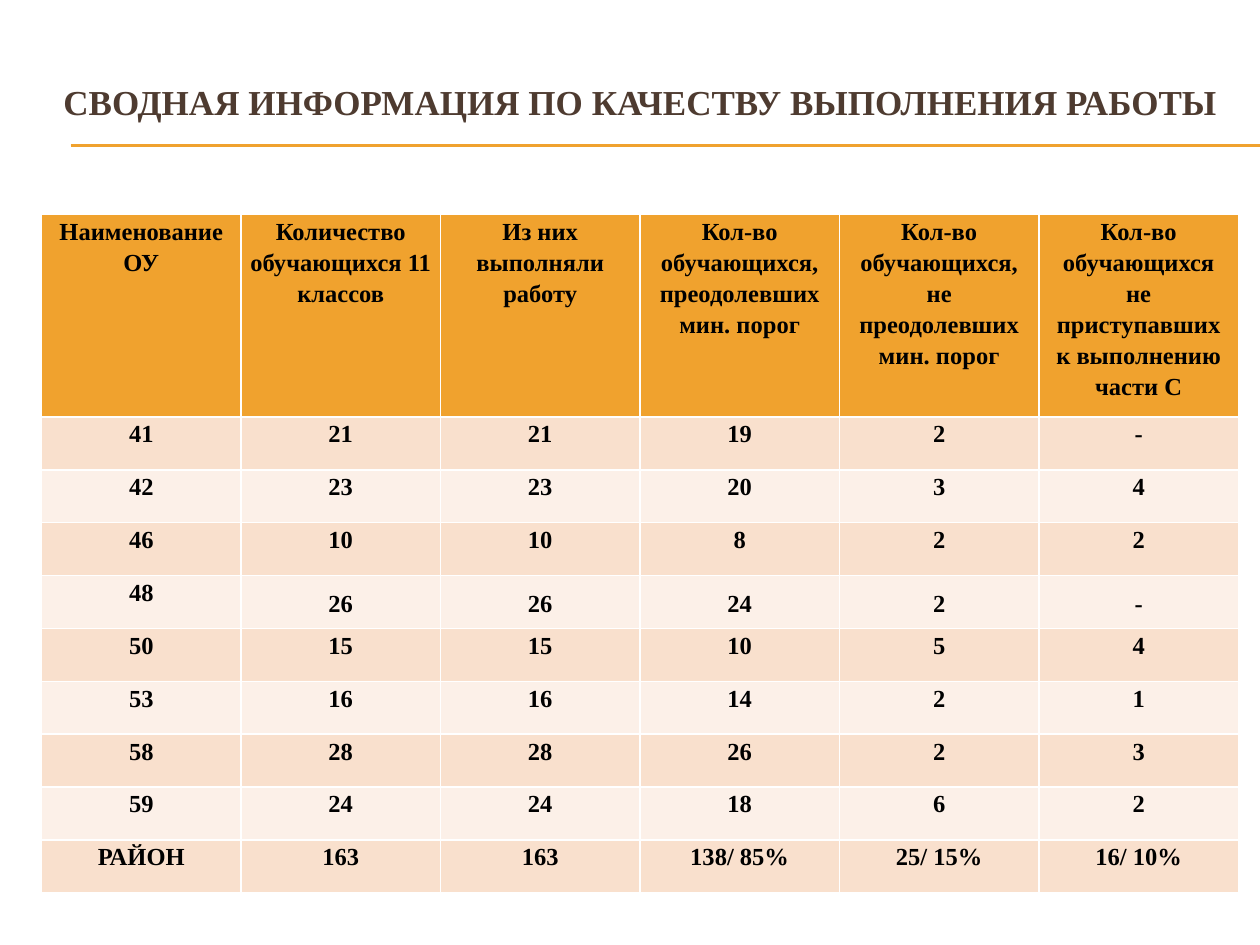
from dataclasses import dataclass

from lxml.etree import SubElement
from pptx import Presentation
from pptx.dml.color import RGBColor as Rgb
from pptx.enum.shapes import MSO_CONNECTOR as Link
from pptx.enum.text import MSO_ANCHOR as Anchor, PP_ALIGN as Align
from pptx.oxml.ns import qn
from pptx.util import Inches, Pt


@dataclass(frozen=True)
class Theme:
    face: str = "Times New Roman"
    title: str = "4E3B30"
    ink: str = "000000"
    gold: str = "F0A22E"
    bands: tuple = ("FCF0E8", "F9E0CD")
    big: int = 20
    body: int = 14


THEME = Theme()
TITLE = "СВОДНАЯ ИНФОРМАЦИЯ ПО КАЧЕСТВУ ВЫПОЛНЕНИЯ РАБОТЫ"
ROWS = [
    ("Наименование ОУ", "Количество обучающихся 11 классов",
     "Из них выполняли работу",
     "Кол-во обучающихся, преодолевших мин. порог",
     "Кол-во обучающихся, не преодолевших мин. порог",
     "Кол-во обучающихся не приступавших к выполнению части С"),
    ("41", "21", "21", "19", "2", "-"),
    ("42", "23", "23", "20", "3", "4"),
    ("46", "10", "10", "8", "2", "2"),
    ("48", "26", "26", "24", "2", "-"),
    ("50", "15", "15", "10", "5", "4"),
    ("53", "16", "16", "14", "2", "1"),
    ("58", "28", "28", "26", "2", "3"),
    ("59", "24", "24", "18", "6", "2"),
    ("РАЙОН", "163", "163", "138/ 85%", "25/ 15%", "16/ 10%"),
]
LOW_ROW = "48"
HEAD_H, ROW_H = 1.47, 0.42


def apply(item, form):
    for name, value in form.items():
        setattr(item, name, value)


def write(frame, text, size, color, **form):
    para = frame.paragraphs[0]
    apply(para, {"alignment": Align.CENTER, **form})
    run = para.add_run()
    run.text = text
    apply(run.font, {"name": THEME.face, "size": Pt(size), "bold": True})
    run.font.color.rgb = Rgb.from_string(color)


def add_rule(slide, y):
    rule = slide.shapes.add_connector(
        Link.STRAIGHT, Inches(0.56), Inches(y), Inches(10), Inches(y))
    rule.line.color.rgb = Rgb.from_string(THEME.gold)
    rule.line.width = Pt(0.75)
    SubElement(rule._element.spPr, qn("a:effectLst"))


def add_title(slide):
    box = slide.shapes.add_textbox(
        Inches(0.33), Inches(0.5), Inches(9.5), Inches(0.92))
    frame = box.text_frame
    apply(frame, {"word_wrap": True, "vertical_anchor": Anchor.TOP,
                  "margin_top": Inches(0.14)})
    write(frame, TITLE, THEME.big, THEME.title)


def fill_cell(cell, text, color, anchor):
    apply(cell, {"margin_left": Inches(0.07), "margin_right": Inches(0.07),
                 "margin_top": 0, "margin_bottom": 0,
                 "vertical_anchor": anchor})
    cell.fill.solid()
    cell.fill.fore_color.rgb = Rgb.from_string(color)
    write(cell.text_frame, text, THEME.body, THEME.ink, line_spacing=1.15)


def add_grid(slide):
    high = HEAD_H + ROW_H * (len(ROWS) - 1)
    grid = slide.shapes.add_table(
        len(ROWS), len(ROWS[0]), Inches(0.33), Inches(1.7),
        Inches(9.5), Inches(high)).table
    for r, row in enumerate(ROWS):
        grid.rows[r].height = Inches(ROW_H if r else HEAD_H)
        color = THEME.bands[r % 2] if r else THEME.gold
        for c, text in enumerate(row):
            low = row[0] == LOW_ROW and c > 0
            anchor = Anchor.MIDDLE if low else Anchor.TOP
            fill_cell(grid.cell(r, c), text, color, anchor)


def main():
    deck = Presentation()
    apply(deck, {"slide_width": Inches(10), "slide_height": Inches(7.5)})
    slide = deck.slides.add_slide(deck.slide_layouts[6])
    for y in (1.15, 1.16):
        add_rule(slide, y)
    add_title(slide)
    add_grid(slide)
    deck.save("out.pptx")


if __name__ == "__main__":
    main()
